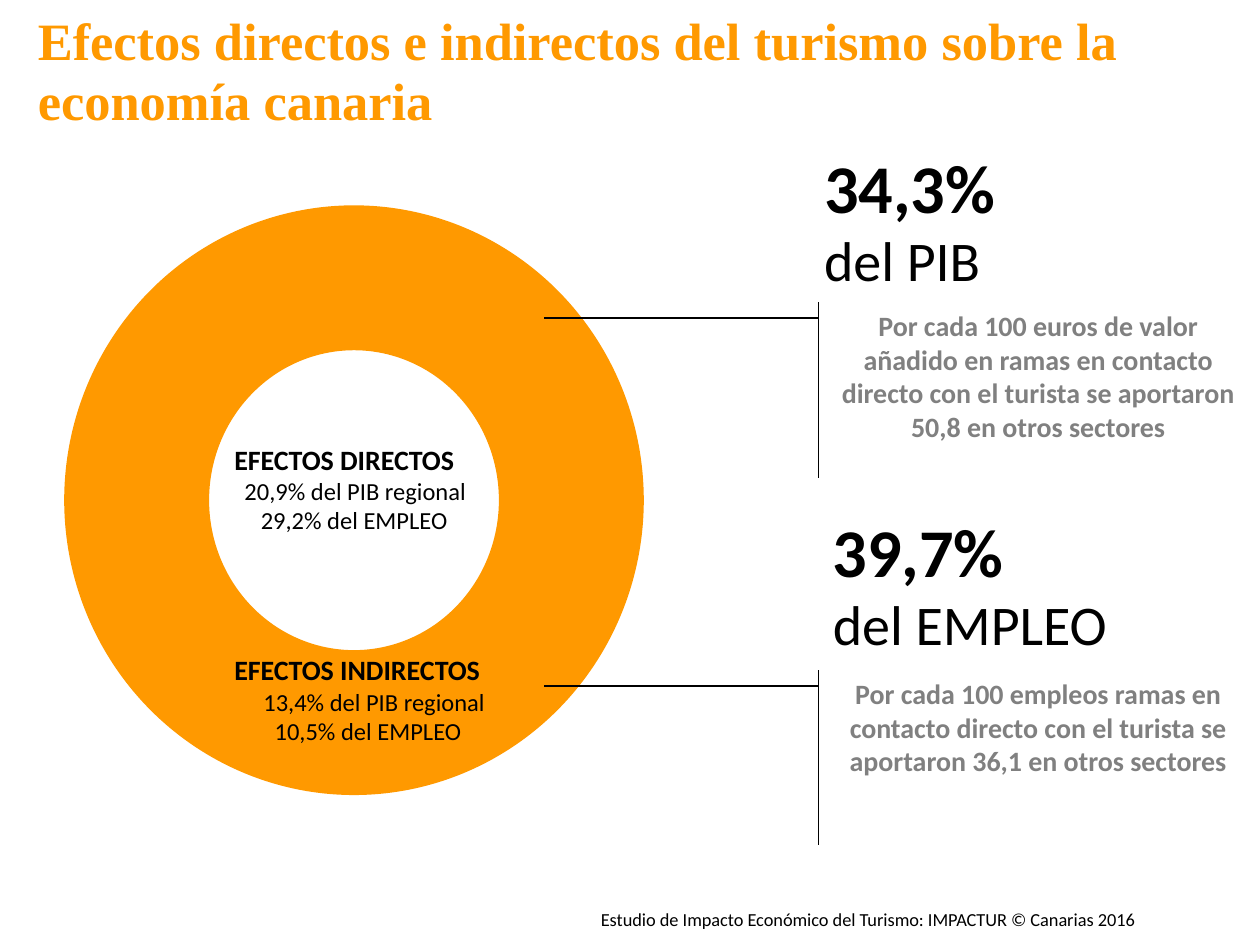
import pptx
import pptx.util
import pptx.dml.color
import pptx.enum.shapes
import pptx.enum.text
from dataclasses import dataclass

ALIGN = pptx.enum.text.PP_ALIGN
SHAPE = pptx.enum.shapes.MSO_SHAPE


@dataclass(frozen=True)
class Theme:
    accent: str = "FF9900"
    ink: str = "000000"
    muted: str = "808080"
    title_font: str = "Times New Roman"
    body_font: str = "Calibri"
    title: float = 30
    figure: float = 39
    unit: float = 32
    heading: float = 16
    body: float = 14
    source: float = 10.5
    rule: float = 0.75


class Deck:
    """Draws styled elements on a slide grid of 100 columns by 75 rows."""

    def __init__(self, theme):
        self.theme = theme
        self.prs = pptx.Presentation()
        self.prs.slide_width = pptx.util.Inches(10)
        self.prs.slide_height = pptx.util.Inches(7.5)
        self.s = self.prs.slides.add_slide(self.prs.slide_layouts[5])

    def box(self, x, y, w, h):
        col, row = self.prs.slide_width / 100, self.prs.slide_height / 75
        return [round(v) for v in (x * col, y * row, w * col, h * row)]

    def set_text(self, sp, text, size, color, bold=False, font=None, align=ALIGN.LEFT):
        tf = sp.text_frame
        tf.text = text
        tf.vertical_anchor = pptx.enum.text.MSO_ANCHOR.TOP
        p = tf.paragraphs[0]
        p.alignment = align
        f = p.runs[0].font
        f.name = font or self.theme.body_font
        f.size = pptx.util.Pt(size)
        f.bold = bold
        f.color.rgb = pptx.dml.color.RGBColor.from_string(color)
        return tf

    def title(self, text, *grid):
        sp = self.s.shapes.title
        sp.left, sp.top, sp.width, sp.height = self.box(*grid)
        t = self.theme
        tf = self.set_text(sp, text, t.title, t.accent, True, t.title_font)
        tf.word_wrap = True
        tf.auto_size = pptx.enum.text.MSO_AUTO_SIZE.NONE
        tf.paragraphs[0].line_spacing = 0.95

    def label(self, text, size, *grid, bold=False):
        sp = self.s.shapes.add_textbox(*self.box(*grid))
        tf = self.set_text(sp, text, size, self.theme.ink, bold)
        tf.margin_left = tf.margin_right = tf.margin_top = tf.margin_bottom = 0
        tf.word_wrap = False
        tf.auto_size = pptx.enum.text.MSO_AUTO_SIZE.SHAPE_TO_FIT_TEXT

    def source(self, text, *grid):
        sp = self.s.shapes.add_textbox(*self.box(*grid))
        t = self.theme
        self.set_text(sp, text, t.source, t.ink, align=ALIGN.RIGHT).word_wrap = True

    def shape(self, kind, adjustments, *grid):
        sp = self.s.shapes.add_shape(kind, *self.box(*grid))
        sp.shadow.inherit = False
        for i, value in enumerate(adjustments):
            sp.adjustments[i] = value
        return sp

    def ring(self, *grid):
        sp = self.shape(SHAPE.DONUT, [0.25], *grid)
        sp.fill.solid()
        sp.fill.fore_color.rgb = pptx.dml.color.RGBColor.from_string(self.theme.accent)
        sp.line.fill.background()

    def callout(self, text, *grid):
        t = self.theme
        leader = [0.09, -0.025, 0.09, -0.234, 0.09, -0.682]
        sp = self.shape(SHAPE.LINE_CALLOUT_2_ACCENT_BAR, leader, *grid)
        sp.fill.background()
        sp.line.color.rgb = pptx.dml.color.RGBColor.from_string(t.ink)
        sp.line.width = pptx.util.Pt(t.rule)
        tf = self.set_text(sp, text, t.heading, t.muted, True, align=ALIGN.CENTER)
        tf.word_wrap = True

    def effect(self, y, heading, width, gdp, gdp_x, jobs, jobs_x):
        t = self.theme
        self.label(heading, t.heading, 18.6, y, width, 2.7, bold=True)
        self.label(gdp, t.body, gdp_x, y + 2.7, 17.8, 2.4)
        self.label(jobs, t.body, jobs_x, y + 5, 15, 2.4)

    def total(self, x, y, figure, unit, width):
        t = self.theme
        self.label(figure, t.figure, x, y, 14.6, 6.6, bold=True)
        self.label(unit, t.unit, x, y + 6.4, width, 5.3)


def main():
    d = Deck(Theme())
    d.title("Efectos directos e indirectos del turismo sobre la economía canaria",
            2, 0.5, 92.9, 7.1)
    d.ring(5.1, 16.3, 46, 46.8)
    d.effect(35.1, "EFECTOS DIRECTOS", 17.7, "20,9% del PIB regional", 19.4,
             "29,2% del EMPLEO", 20.7)
    d.effect(51.8, "EFECTOS INDIRECTOS", 19.7, "13,4% del PIB regional", 20.9,
             "10,5% del EMPLEO", 21.8)
    d.total(65.4, 11.5, "34,3%", "del PIB", 13.6)
    d.total(66.1, 40.4, "39,7%", "del EMPLEO", 24.4)
    d.callout("Por cada 100 euros de valor añadido en ramas en contacto directo "
              "con el turista se aportaron 50,8 en otros sectores",
              65.8, 24, 33.2, 13.9)
    d.callout("Por cada 100 empleos ramas en contacto directo con el turista "
              "se aportaron 36,1 en otros sectores", 65.8, 53.2, 33.2, 13.9)
    d.source("Estudio de Impacto Económico del Turismo: IMPACTUR © Canarias 2016",
             39, 71.6, 52.1, 2.8)
    d.prs.save("out.pptx")


if __name__ == "__main__":
    main()
